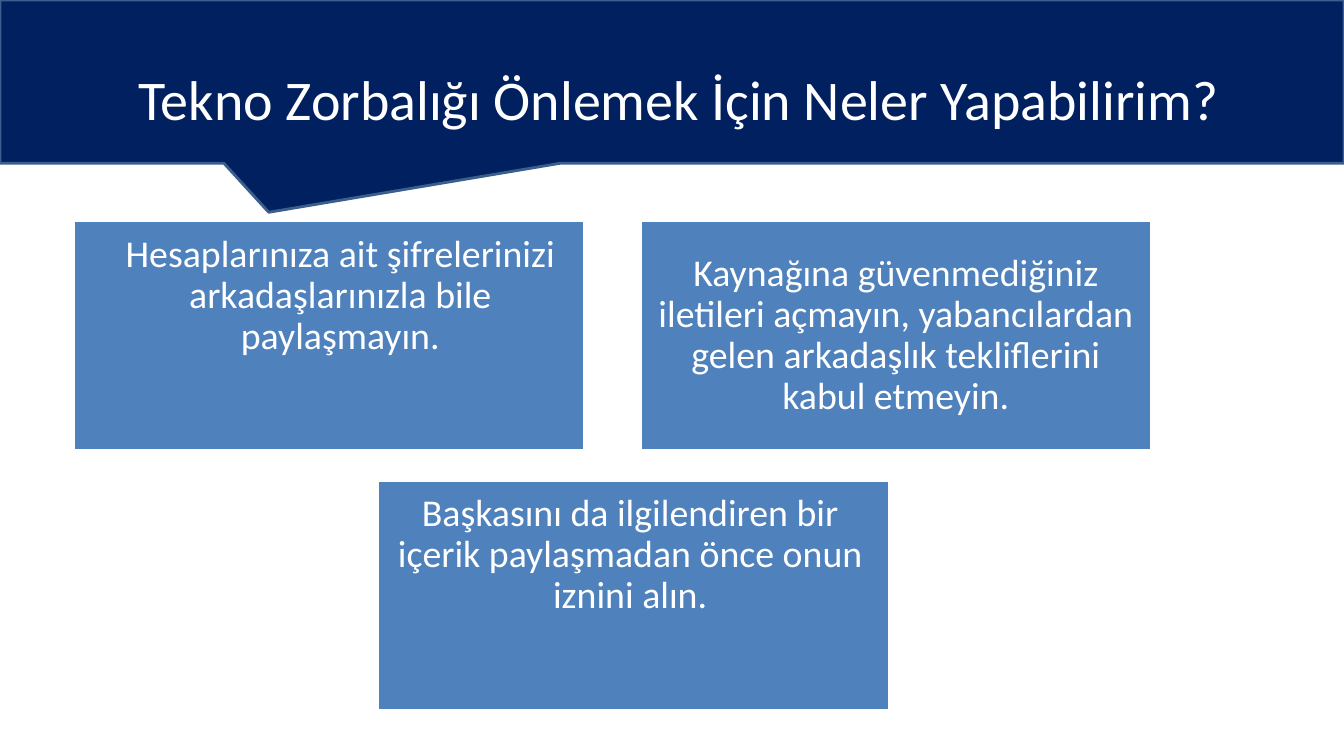
from dataclasses import dataclass

from pptx import Presentation
from pptx.dml.color import RGBColor
from pptx.enum import shapes, text
from pptx.util import Inches, Pt

TITLE = "Tekno Zorbalığı Önlemek İçin Neler Yapabilirim?"
# Each card: wording, left, top, anchor, insets (left, top, right, bottom)
CARDS = [
    ("Hesaplarınıza ait şifrelerinizi arkadaşlarınızla bile paylaşmayın.",
     0.73, 2.19, text.MSO_ANCHOR.TOP, (0.22, 0.14, 0, 0.06)),
    ("Kaynağına güvenmediğiniz iletileri açmayın, yabancılardan gelen "
     "arkadaşlık tekliflerini kabul etmeyin.",
     6.35, 2.19, text.MSO_ANCHOR.MIDDLE, (0.1, 0.1, 0.1, 0.1)),
    ("Başkasını da ilgilendiren bir içerik paylaşmadan önce onun iznini alın.",
     3.75, 4.77, text.MSO_ANCHOR.TOP, (0.12, 0.13, 0.19, 0.06)),
]
CARD_SIZE = (5.07, 2.28)
SLIDE_SIZE = (13.33, 7.5)
BANNER_HEIGHT = 1.62


@dataclass(frozen=True)
class Theme:
    font: str = "Calibri"
    title_size: int = 40
    card_size: int = 27
    line_width: int = 2
    white: str = "FFFFFF"
    navy: str = "002060"
    navy_edge: str = "3A5F8C"
    blue: str = "4F81BD"


THEME = Theme()


def add_block(slide, preset, place, fill, line):
    block = slide.shapes.add_shape(preset, *map(Inches, place))
    block.shadow.inherit = False
    block.fill.solid()
    block.fill.fore_color.rgb = RGBColor.from_string(fill)
    block.line.color.rgb = RGBColor.from_string(line)
    block.line.width = Pt(THEME.line_width)
    return block


def write(shape, wording, size, anchor, insets, spacing):
    frame = shape.text_frame
    frame.word_wrap = True
    frame.auto_size = text.MSO_AUTO_SIZE.NONE
    frame.vertical_anchor = anchor
    (frame.margin_left, frame.margin_top,
     frame.margin_right, frame.margin_bottom) = map(Inches, insets)
    para = frame.paragraphs[0]
    para.alignment = text.PP_ALIGN.CENTER
    para.line_spacing = spacing
    span = para.add_run()
    span.text = wording
    span.font.name = THEME.font
    span.font.size = Pt(size)
    span.font.color.rgb = RGBColor.from_string(THEME.white)


def add_banner(slide):
    banner = add_block(slide, shapes.MSO_SHAPE.RECTANGULAR_CALLOUT,
                       (0, 0, SLIDE_SIZE[0], BANNER_HEIGHT),
                       THEME.navy, THEME.navy_edge)
    banner.adjustments[0] = -0.3
    banner.adjustments[1] = 0.8
    title = slide.shapes.title
    title.left, title.top, title.width, title.height = map(
        Inches, (0.73, 0.39, 12, 1.17))
    write(title, TITLE, THEME.title_size, text.MSO_ANCHOR.MIDDLE,
          (0.12, 0.06, 0.12, 0.06), 1.0)
    title._element.addprevious(banner._element)  # banner goes behind the title


def main():
    deck = Presentation()
    deck.slide_width, deck.slide_height = map(Inches, SLIDE_SIZE)
    page = deck.slides.add_slide(deck.slide_layouts.get_by_name("Title Only"))
    add_banner(page)
    for wording, left, top, anchor, insets in CARDS:
        card = add_block(page, shapes.MSO_SHAPE.RECTANGLE,
                         (left, top, *CARD_SIZE), THEME.blue, THEME.white)
        write(card, wording, THEME.card_size, anchor, insets, 0.9)
    deck.save("out.pptx")


if __name__ == "__main__":
    main()
